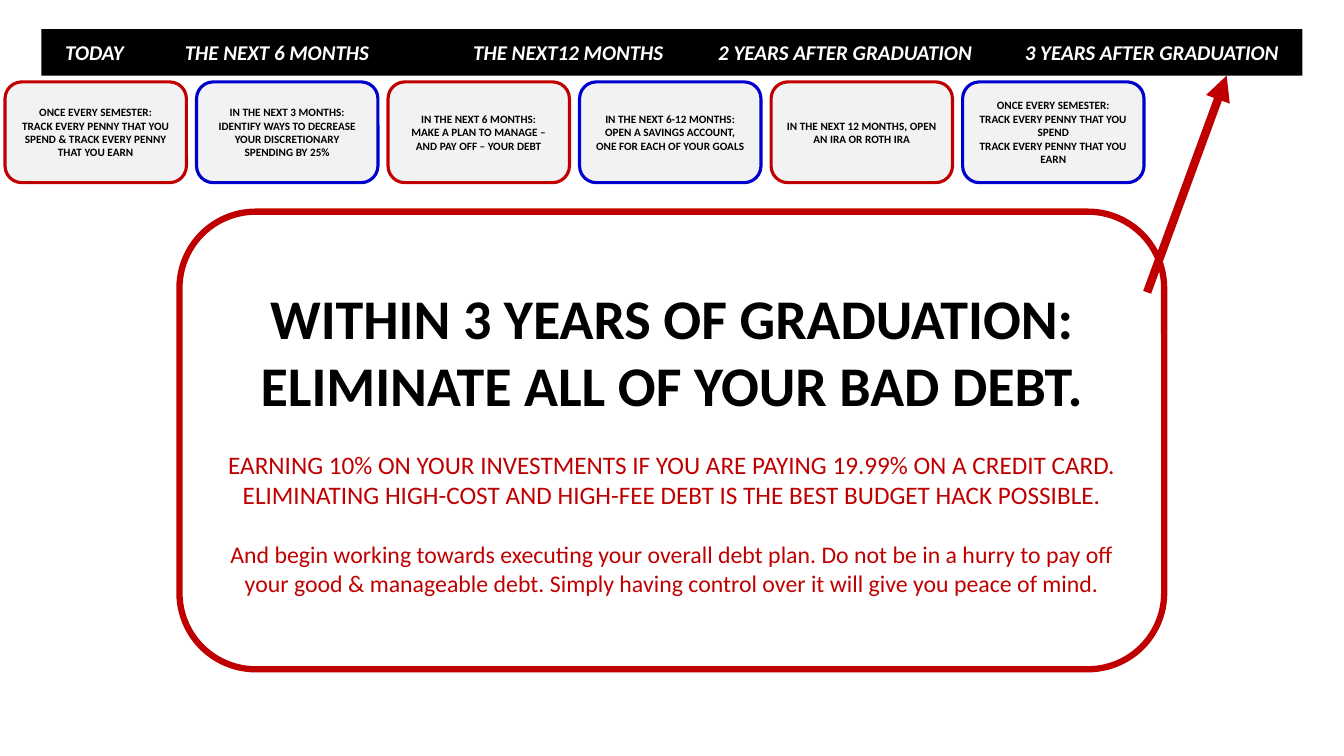
from dataclasses import dataclass

from lxml.etree import SubElement
from pptx import Presentation
from pptx.dml.color import RGBColor as Rgb
from pptx.enum.shapes import MSO_CONNECTOR as Connector, MSO_SHAPE as Preset
from pptx.enum.text import MSO_ANCHOR as Anchor, PP_ALIGN as Align
from pptx.oxml.ns import qn
from pptx.shapes.autoshape import Shape
from pptx.slide import Slide
from pptx.util import Pt


@dataclass(frozen=True)
class Theme:
    font: str = "Calibri"
    black: str = "000000"
    white: str = "FFFFFF"
    red: str = "C00000"
    blue: str = "0000CC"
    grey: str = "F2F2F2"
    header_size: float = 15
    milestone_size: float = 8
    headline_size: float = 40
    detail_size: float = 18
    advice_size: float = 17


THEME = Theme()


@dataclass(frozen=True)
class Line:
    text: str
    size: float
    color: str = THEME.black
    bold: bool = True
    italic: bool = False
    space_before: float = 0
    align: Align = Align.CENTER


@dataclass(frozen=True)
class Box:
    left: float
    top: float
    width: float
    height: float
    lines: list[Line]
    preset: Preset = Preset.ROUNDED_RECTANGLE
    fill: str | None = None
    border: str | None = None
    border_width: float = 2.25


def draw_box(slide: Slide, box: Box) -> Shape:
    shape = slide.shapes.add_shape(
        box.preset, Pt(box.left), Pt(box.top), Pt(box.width), Pt(box.height))
    shape.shadow.inherit = False
    if box.fill:
        shape.fill.solid()
        shape.fill.fore_color.rgb = Rgb.from_string(box.fill)
    else:
        shape.fill.background()
    if box.border:
        shape.line.color.rgb = Rgb.from_string(box.border)
        shape.line.width = Pt(box.border_width)
    else:
        shape.line.fill.background()

    frame = shape.text_frame
    frame.word_wrap = True
    frame.vertical_anchor = Anchor.MIDDLE
    frame.text = "\n".join(line.text for line in box.lines)
    for paragraph, line in zip(frame.paragraphs, box.lines):
        paragraph.alignment = line.align
        if line.space_before:
            paragraph.space_before = Pt(line.space_before)
        for run in paragraph.runs:
            run.font.name = THEME.font
            run.font.size = Pt(line.size)
            run.font.bold = line.bold
            run.font.italic = line.italic
            run.font.color.rgb = Rgb.from_string(line.color)
    return shape


def set_tab_stops(shape: Shape, stops: list[float]) -> None:
    properties = shape.text_frame.paragraphs[0]._p.get_or_add_pPr()
    tab_list = SubElement(properties, qn("a:tabLst"))
    for stop in stops:
        SubElement(tab_list, qn("a:tab"), pos=str(Pt(stop)), algn="l")


def draw_arrow(slide: Slide, start: tuple[float, float],
               end: tuple[float, float], color: str, width: float) -> None:
    arrow = slide.shapes.add_connector(
        Connector.STRAIGHT, *(Pt(value) for value in start + end))
    arrow.line.color.rgb = Rgb.from_string(color)
    arrow.line.width = Pt(width)
    SubElement(arrow.line._get_or_add_ln(), qn("a:tailEnd"), type="triangle")
    SubElement(arrow._element.spPr, qn("a:effectLst"))


# Timeline wording: each period starts at its own tab stop
PERIODS = ["TODAY", "THE NEXT 6 MONTHS", "THE NEXT12 MONTHS",
           "2 YEARS AFTER GRADUATION", "3 YEARS AFTER GRADUATION"]
PERIOD_STOPS = [85.5, 291.5, 466.5, 685.5]

MILESTONES = [
    ["ONCE EVERY SEMESTER:",
     "TRACK EVERY PENNY THAT YOU SPEND & TRACK EVERY PENNY THAT YOU EARN"],
    ["IN THE NEXT 3 MONTHS:",
     "IDENTIFY WAYS TO DECREASE YOUR DISCRETIONARY SPENDING BY 25%"],
    ["IN THE NEXT 6 MONTHS:",
     "MAKE A PLAN TO MANAGE – AND PAY OFF – YOUR DEBT"],
    ["IN THE NEXT 6-12 MONTHS:",
     "OPEN A SAVINGS ACCOUNT, ONE FOR EACH OF YOUR GOALS"],
    ["IN THE NEXT 12 MONTHS, OPEN AN IRA OR ROTH IRA"],
    ["ONCE EVERY SEMESTER:",
     "TRACK EVERY PENNY THAT YOU SPEND",
     "TRACK EVERY PENNY THAT YOU EARN"],
]
MILESTONE_LEFT, MILESTONE_PITCH = 3.6, 136.8

GOAL = [
    Line("WITHIN 3 YEARS OF GRADUATION:", THEME.headline_size),
    Line("ELIMINATE ALL OF YOUR BAD DEBT.", THEME.headline_size),
    Line("EARNING 10% ON YOUR INVESTMENTS IF YOU ARE PAYING 19.99% ON A CREDIT "
         "CARD. ELIMINATING HIGH-COST AND HIGH-FEE DEBT IS THE BEST BUDGET "
         "HACK POSSIBLE.",
         THEME.detail_size, THEME.red, bold=False, space_before=22),
    Line("And begin working towards executing your overall debt plan. Do not "
         "be in a hurry to pay off your good & manageable debt. Simply having "
         "control over it will give you peace of mind.",
         THEME.advice_size, THEME.red, bold=False, space_before=22),
]


def main() -> None:
    deck = Presentation()
    deck.slide_width, deck.slide_height = Pt(960), Pt(540)
    slide = deck.slides.add_slide(deck.slide_layouts[6])

    # Timeline header
    periods = Line("\t".join(PERIODS), THEME.header_size, THEME.white,
                   italic=True, align=Align.LEFT)
    header = draw_box(slide, Box(29.5, 20.9, 900.7, 33.1, [periods],
                                 Preset.RECTANGLE, THEME.black))
    header.text_frame.margin_left = Pt(17)
    set_tab_stops(header, PERIOD_STOPS)

    # Milestones, with alternating borders
    for index, texts in enumerate(MILESTONES):
        draw_box(slide, Box(
            MILESTONE_LEFT + index * MILESTONE_PITCH, 58.5, 129.6, 72,
            [Line(text, THEME.milestone_size) for text in texts],
            fill=THEME.grey, border=(THEME.red, THEME.blue)[index % 2]))

    # Three-year goal and its arrow to the timeline
    draw_arrow(slide, (819.4, 208.8), (876.2, 54), THEME.red, 6)
    draw_box(slide, Box(128.2, 151.2, 703.4, 326.9, GOAL,
                        border=THEME.red, border_width=4.5))

    deck.save("out.pptx")


if __name__ == "__main__":
    main()
